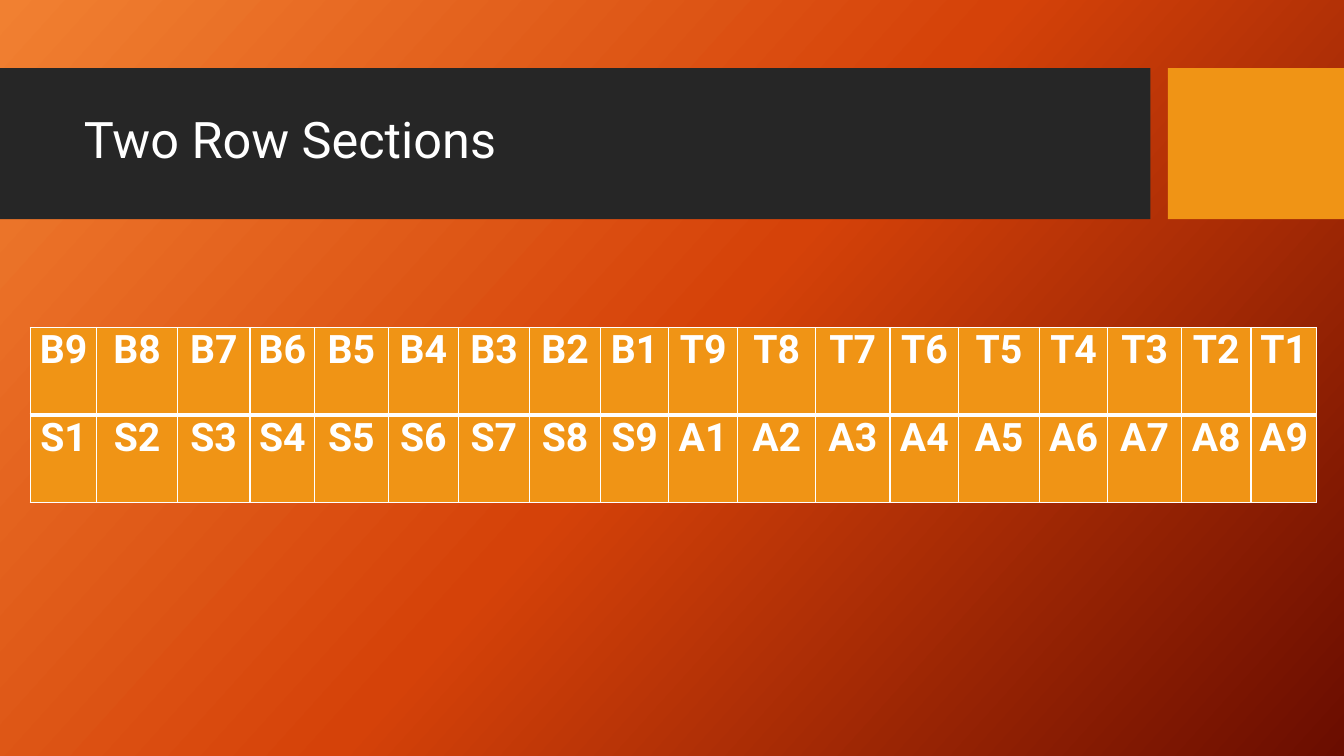
from copy import deepcopy

from lxml import etree
from pptx import Presentation
from pptx.dml.color import RGBColor
from pptx.enum.shapes import MSO_SHAPE
from pptx.enum.text import MSO_ANCHOR, PP_ALIGN
from pptx.oxml.ns import qn
from pptx.util import Emu, Inches, Pt

RECT = MSO_SHAPE.RECTANGLE
MIDDLE, TOP = MSO_ANCHOR.MIDDLE, MSO_ANCHOR.TOP
LEFT, CENTER = PP_ALIGN.LEFT, PP_ALIGN.CENTER

WIDE, HIGH = Inches(13.33), Inches(7.5)
COLORS = {"dark": "262626", "amber": "F09415", "white": "FFFFFF"}
GLOW = [(0, "F18031"), (0.5, "D54209"), (1, "6A0D00")]
ANGLE = 42

TITLE = {"name": "Roboto", "size": Pt(36), "bold": False}
SEAT = {"name": "Roboto", "size": Pt(28), "bold": True}
INSET = {"margin_left": Inches(0.07), "margin_right": Inches(0.07),
         "margin_top": 0, "margin_bottom": 0, "vertical_anchor": TOP}

# Seat rows: a section letter and the order of its numbers
UP, DOWN = range(1, 10), range(9, 0, -1)
ROWS = [[("B", DOWN), ("T", DOWN)], [("S", UP), ("A", UP)]]
COLS = [0.66, 0.8, 0.72, 0.64, 0.73, 0.7, 0.7, 0.71, 0.67,
        0.69, 0.77, 0.74, 0.68, 0.8, 0.68, 0.73, 0.69, 0.65]
ROW = Inches(0.87)
THIN, THICK = Pt(1), Pt(3)


def color(name):
    return RGBColor.from_string(COLORS[name])


def place(x, y, w, h):
    """Turn shares of the slide into lengths."""
    return [Emu(int(part)) for part in (x * WIDE, y * HIGH, w * WIDE, h * HIGH)]


def paint(fill, name):
    fill.solid()
    fill.fore_color.rgb = color(name)


def shade(slide):
    fill = slide.background.fill
    fill.gradient()
    fill.gradient_angle = 360 - ANGLE
    first = slide.background._cSld.find(".//" + qn("a:gs"))
    first.addnext(deepcopy(first))
    for stop, (share, tint) in zip(fill.gradient_stops, GLOW):
        stop.position = share
        stop.color.rgb = RGBColor.from_string(tint)


def block(slide, box, name):
    shape = slide.shapes.add_shape(RECT, *place(*box))
    shape.shadow.inherit = False
    paint(shape.fill, name)
    shape.line.fill.background()


def write(frame, text, style, align):
    para = frame.paragraphs[0]
    para.alignment = align
    run = para.add_run()
    run.text = text
    for key, value in style.items():
        setattr(run.font, key, value)
    run.font.color.rgb = color("white")
    return para


def title(slide, box, text):
    frame = slide.shapes.add_textbox(*place(*box)).text_frame
    frame.word_wrap = True
    frame.vertical_anchor = MIDDLE
    write(frame, text, TITLE, LEFT).line_spacing = 0.9


def border(cell, widths):
    props = cell._tc.get_or_add_tcPr()
    for spot, (side, width) in enumerate(widths.items()):
        line = etree.Element(qn("a:ln" + side), w=str(width))
        fill = etree.SubElement(line, qn("a:solidFill"))
        etree.SubElement(fill, qn("a:srgbClr"), val=COLORS["white"])
        props.insert(spot, line)


def seats(slide, left, top):
    size = Inches(sum(COLS)), ROW * len(ROWS)
    spot = place(left, top, 0, 0)[:2]
    table = slide.shapes.add_table(len(ROWS), len(COLS), *spot, *size).table
    for col, width in zip(table.columns, COLS):
        col.width = Inches(width)
    for r, parts in enumerate(ROWS):
        table.rows[r].height = ROW
        names = [f"{part}{num}" for part, nums in parts for num in nums]
        for c, name in enumerate(names):
            cell = table.cell(r, c)
            for key, value in INSET.items():
                setattr(cell, key, value)
            paint(cell.fill, "amber")
            # A thick line parts the two rows
            border(cell, {"L": THIN, "R": THIN,
                          "T": THICK if r else THIN,
                          "B": THIN if r else THICK})
            write(cell.text_frame, name, SEAT, CENTER)


def main():
    deck = Presentation()
    deck.slide_width, deck.slide_height = WIDE, HIGH
    slide = deck.slides.add_slide(deck.slide_layouts[6])
    shade(slide)

    # Title band and its accent
    block(slide, (0, 0.09, 0.856, 0.2), "dark")
    block(slide, (0.869, 0.09, 0.131, 0.2), "amber")
    title(slide, (0.055, 0.11, 0.79, 0.157), "Two Row Sections")

    # Seat plan
    seats(slide, 0.0225, 0.433)
    deck.save("out.pptx")


if __name__ == "__main__":
    main()
